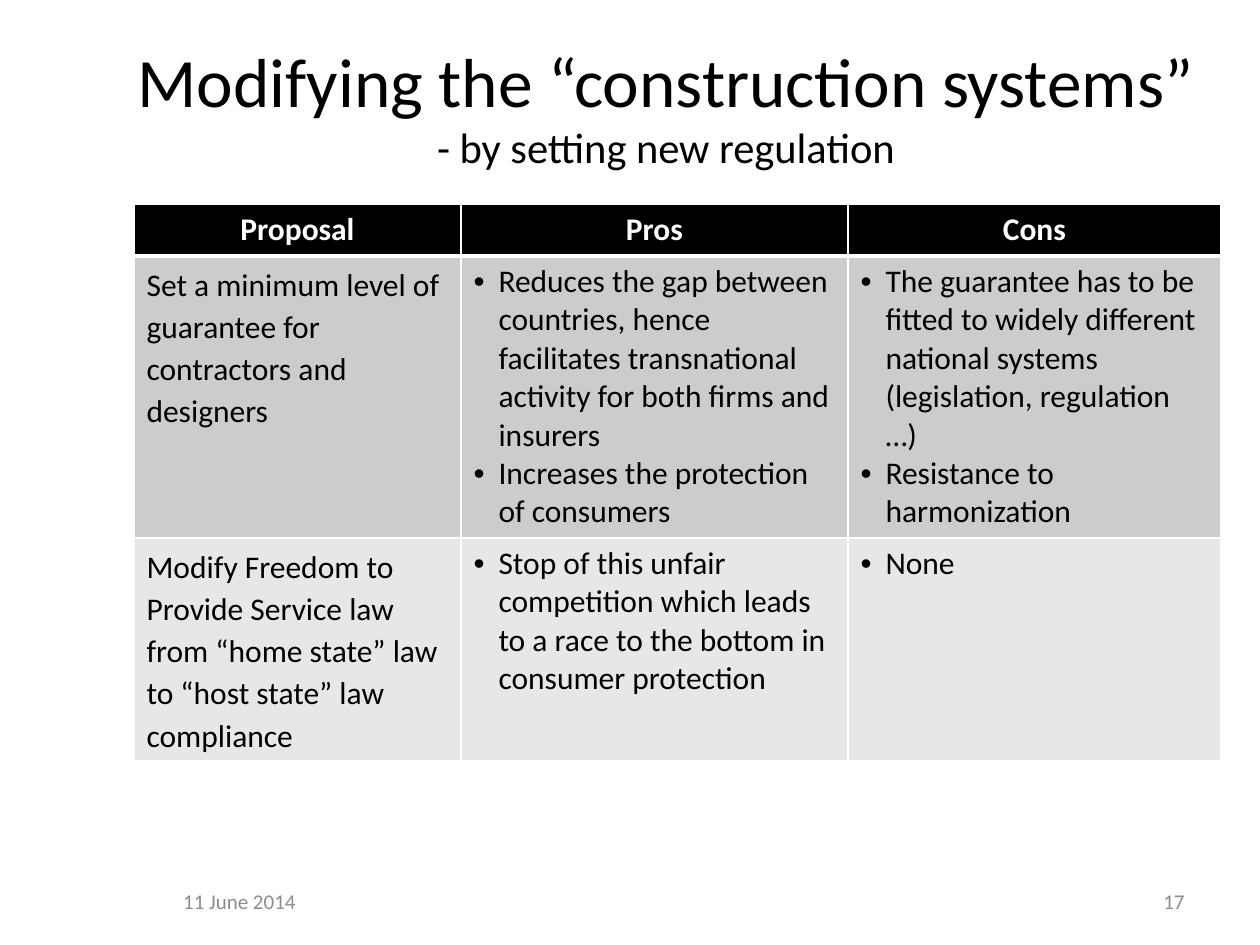
from dataclasses import dataclass

from lxml.etree import SubElement
from pptx import Presentation
from pptx.dml.color import RGBColor as RGB
from pptx.enum.text import MSO_ANCHOR as Anchor, MSO_AUTO_SIZE as AutoSize, PP_ALIGN as Align
from pptx.oxml.ns import qn
from pptx.util import Emu, Pt

# Content
TITLE = "Modifying the “construction systems”"
SUBTITLE = "- by setting new regulation"
HEADERS = ["Proposal", "Pros", "Cons"]
PROPOSALS = [
    (
        "Set a minimum level of guarantee for contractors and designers",
        ["Reduces the gap between countries, hence facilitates transnational "
         "activity for both firms and insurers",
         "Increases the protection of consumers"],
        ["The guarantee has to be fitted to widely different national systems "
         "(legislation, regulation …)",
         "Resistance to harmonization"],
    ),
    (
        "Modify Freedom to Provide Service law from “home state” law "
        "to “host state” law compliance",
        ["Stop of this unfair competition which leads to a race to the bottom "
         "in consumer protection"],
        ["None"],
    ),
]

# Boxes: left, top, width, height in px
TITLE_BOX = (110, 26, 1112, 158)
TABLE_LEFT, TABLE_TOP = 134, 204
COLUMN_WIDTHS = [327, 387, 373]
ROW_HEIGHTS = [52, 282, 223]
BULLET_INDENT = 25
FOOTERS = [
    ("11 June 2014", (115, 876, 249, 50), Align.CENTER),
    ("17", (903, 876, 294, 50), Align.RIGHT),
]


@dataclass(frozen=True)
class Theme:
    font: str = "Calibri"
    text: str = "000000"
    muted: str = "8C8C8C"
    header_text: str = "FFFFFF"
    header_fill: str = "000000"
    row_fills: tuple = ("CCCCCC", "E7E7E7")
    border: str = "FFFFFF"
    title_size: float = 39.6
    subtitle_size: float = 24.3
    table_size: float = 18
    footer_size: float = 12


THEME = Theme()


def px(value):
    return Emu(value * 914400 // 126)


def style_font(font, size, color, bold=False):
    font.name, font.size, font.bold = THEME.font, Pt(size), bold
    font.color.rgb = RGB.from_string(color)


def place(shape, box):
    shape.left, shape.top, shape.width, shape.height = map(px, box)


def add_borders(cell, bottom_width):
    properties = cell._tc.get_or_add_tcPr()
    for side, width in (("L", 1), ("R", 1), ("T", 1), ("B", bottom_width)):
        line = SubElement(properties, qn(f"a:ln{side}"), w=str(Pt(width)))
        fill = SubElement(line, qn("a:solidFill"))
        SubElement(fill, qn("a:srgbClr"), val=THEME.border)


def add_bullet(paragraph):
    properties = paragraph._p.get_or_add_pPr()
    properties.set("marL", str(px(BULLET_INDENT)))
    properties.set("indent", str(-px(BULLET_INDENT)))
    SubElement(properties, qn("a:buFont"), typeface="Arial")
    SubElement(properties, qn("a:buChar"), char="•")


def fill_cell(cell, content, fill, header=False):
    add_borders(cell, 3 if header else 1)
    cell.fill.solid()
    cell.fill.fore_color.rgb = RGB.from_string(fill)
    bulleted = isinstance(content, list)
    cell.text = "\n".join(content) if bulleted else content
    for paragraph in cell.text_frame.paragraphs:
        if bulleted:
            add_bullet(paragraph)
        elif header:
            paragraph.alignment = Align.CENTER
        else:
            paragraph.line_spacing = 1.1
        color = THEME.header_text if header else THEME.text
        style_font(paragraph.font, THEME.table_size, color, header)


presentation = Presentation()
presentation.slide_width, presentation.slide_height = px(1260), px(945)
slide = presentation.slides.add_slide(presentation.slide_layouts[5])

# Title with a smaller second line
title = slide.shapes.title
place(title, TITLE_BOX)
title.text_frame.auto_size = AutoSize.NONE
title.text_frame.vertical_anchor = Anchor.MIDDLE
paragraph = title.text_frame.paragraphs[0]
paragraph.alignment = Align.CENTER
for text, size in ((TITLE, THEME.title_size), (SUBTITLE, THEME.subtitle_size)):
    if paragraph.runs:
        paragraph.add_line_break()
    run = paragraph.add_run()
    run.text = text
    style_font(run.font, size, THEME.text)

# Date and slide number
for text, box, alignment in FOOTERS:
    footer = slide.shapes.add_textbox(*map(px, box))
    footer.text_frame.word_wrap = True
    footer.text_frame.vertical_anchor = Anchor.MIDDLE
    paragraph = footer.text_frame.paragraphs[0]
    paragraph.text, paragraph.alignment = text, alignment
    style_font(paragraph.font, THEME.footer_size, THEME.muted)

# Table of proposals
rows = [HEADERS, *PROPOSALS]
fills = [THEME.header_fill, *THEME.row_fills]
table = slide.shapes.add_table(
    len(rows), len(HEADERS), px(TABLE_LEFT), px(TABLE_TOP),
    px(sum(COLUMN_WIDTHS)), px(sum(ROW_HEIGHTS))).table
for column, width in zip(table.columns, COLUMN_WIDTHS):
    column.width = px(width)
for row_index, (row, height, fill) in enumerate(zip(rows, ROW_HEIGHTS, fills)):
    table.rows[row_index].height = px(height)
    for column_index, content in enumerate(row):
        fill_cell(table.cell(row_index, column_index), content, fill, row_index == 0)

presentation.save("out.pptx")
